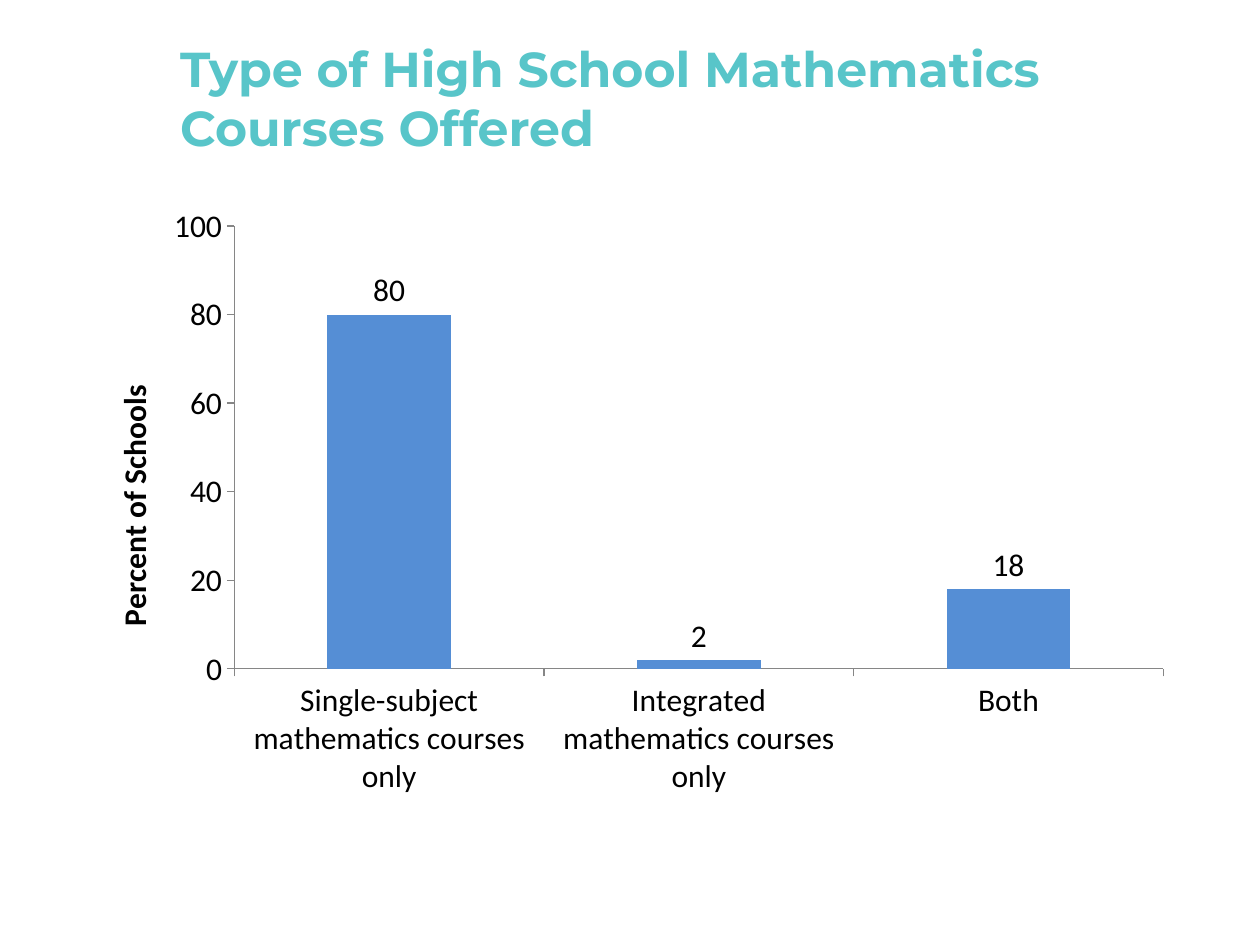
from lxml.etree import SubElement
from pptx import Presentation
from pptx.chart.data import CategoryChartData
from pptx.dml.color import RGBColor
from pptx.enum.chart import XL_CHART_TYPE, XL_LABEL_POSITION, XL_TICK_MARK
from pptx.enum.text import MSO_ANCHOR, PP_ALIGN
from pptx.oxml.ns import qn
from pptx.util import Inches, Pt

TITLE = "Type of High School Mathematics Courses Offered"
AXIS_TITLE = "Percent of Schools"
SCHOOLS = {
    "Single-subject mathematics courses only": 80,
    "Integrated mathematics courses only": 2,
    "Both": 18,
}
TITLE_BOX = (1.33, 0.3, 8.17, 0.95)
CHART_BOX = (0.58, 1.55, 8.83, 4.87)
PLOT_LAYOUT = {"layoutTarget": "inner", "xMode": "edge", "yMode": "edge",
               "x": 0.145, "y": 0.05, "w": 0.835, "h": 0.722}
AXIS_TITLE_LAYOUT = {"xMode": "edge", "yMode": "edge", "x": 0.03, "y": 0.3}


def style_font(font, name, size, color, bold=False):
    font.name, font.size, font.bold = name, Pt(size), bold
    font.color.rgb = RGBColor.from_string(color)


def set_layout(parent, position, settings):
    for old in parent.findall(qn("c:layout")):
        parent.remove(old)
    layout = SubElement(parent, qn("c:layout"))
    manual = SubElement(layout, qn("c:manualLayout"))
    for tag, value in settings.items():
        SubElement(manual, qn(f"c:{tag}")).set("val", str(value))
    parent.insert(position, layout)


def add_title(slide):
    title = slide.shapes.title
    title.left, title.top, title.width, title.height = map(Inches, TITLE_BOX)
    frame = title.text_frame
    frame.text = TITLE
    frame.word_wrap = True
    frame.vertical_anchor = MSO_ANCHOR.MIDDLE
    frame.paragraphs[0].alignment = PP_ALIGN.LEFT
    style_font(frame.paragraphs[0].runs[0].font, "Montserrat", 28, "58C5C9", True)


def add_course_chart(slide):
    data = CategoryChartData()
    data.categories = list(SCHOOLS)
    data.add_series("Series 1", list(SCHOOLS.values()))
    chart = slide.shapes.add_chart(
        XL_CHART_TYPE.COLUMN_CLUSTERED, *map(Inches, CHART_BOX), data).chart
    chart.has_legend = chart.has_title = False
    style_font(chart.font, "Calibri", 18, "000000")

    plot = chart.plots[0]
    plot.gap_width = 150
    plot.vary_by_categories = False
    bars = plot.series[0].format.fill
    bars.solid()
    bars.fore_color.rgb = RGBColor.from_string("558ED5")
    plot.has_data_labels = True
    plot.data_labels.show_value = True
    plot.data_labels.position = XL_LABEL_POSITION.OUTSIDE_END

    percent_axis = chart.value_axis
    for axis in (chart.category_axis, percent_axis):
        axis.has_major_gridlines = False
        axis.major_tick_mark = XL_TICK_MARK.OUTSIDE
        axis.format.line.color.rgb = RGBColor.from_string("868686")
        axis.format.line.width = Pt(0.75)
    percent_axis.minimum_scale, percent_axis.maximum_scale = 0, 100
    percent_axis.major_unit = 20
    axis_title = percent_axis.axis_title
    axis_title.text_frame.text = AXIS_TITLE
    style_font(axis_title.text_frame.paragraphs[0].runs[0].font,
               "Calibri", 18, "000000", True)

    plot_area = chart.element.find(".//" + qn("c:plotArea"))
    set_layout(plot_area, 0, PLOT_LAYOUT)
    set_layout(plot_area.find(f"{qn('c:valAx')}/{qn('c:title')}"), 1, AXIS_TITLE_LAYOUT)


def main():
    """Build the slide on high school mathematics course types."""
    presentation = Presentation()
    presentation.slide_width, presentation.slide_height = Inches(10), Inches(7.5)
    slide = presentation.slides.add_slide(presentation.slide_layouts[5])
    add_course_chart(slide)
    add_title(slide)
    presentation.save("out.pptx")


if __name__ == "__main__":
    main()
